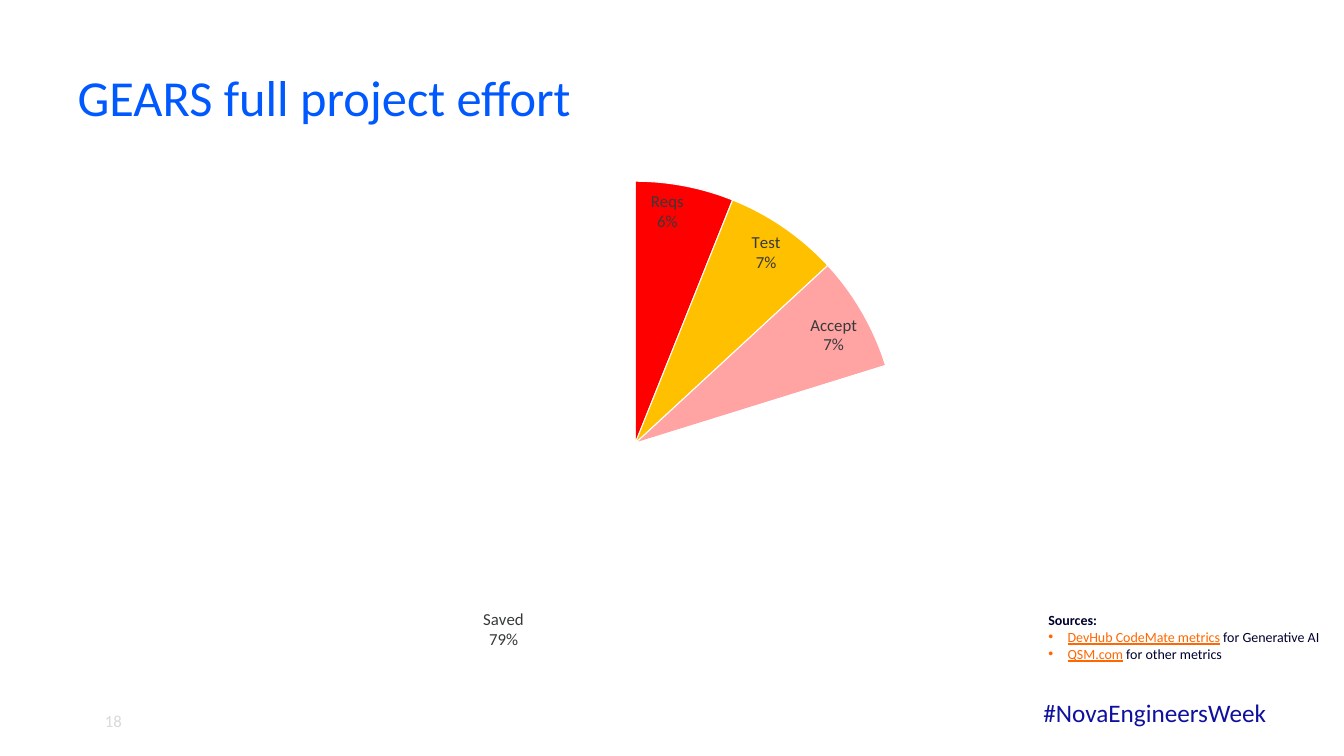
from lxml import etree
from pptx import Presentation
from pptx.chart.data import CategoryChartData
from pptx.dml.color import RGBColor
from pptx.enum.chart import XL_CHART_TYPE, XL_LABEL_POSITION as LabelPos
from pptx.enum.text import MSO_ANCHOR, PP_ALIGN
from pptx.oxml import parse_xml
from pptx.oxml.ns import nsdecls, qn
from pptx.util import Inches, Pt

FONT = "Calibri"
COLORS = {
    "title": "0058FF", "hashtag": "10109F", "text": "000030", "link": "FF6700",
    "number": "D8D9DA", "label": "363A3B", "white": "FFFFFF",
}
# phase: (percentage of effort, slice colour)
EFFORT = {
    "Reqs": (6, "FF0000"), "Design": (0, "00B050"), "Code": (0, "0F53FF"),
    "Test": (7, "FFC000"), "Accept": (7, "FFA3A3"), "Deploy": (0, "7030A0"),
    "Saved": (79, None),
}
UNLABELLED = ("Design", "Code")
SOURCES = [
    ("DevHub CodeMate metrics", " for Generative AI"),
    ("QSM.com", " for other metrics"),
]
PERCENT = '0"%"'


def style_font(font, size, color, bold=False, underline=False):
    font.name, font.size = FONT, Pt(size)
    font.bold, font.underline = bold, underline
    font.color.rgb = RGBColor.from_string(COLORS[color])


def add_run(paragraph, text, size, color, **style):
    run = paragraph.add_run()
    run.text = text
    style_font(run.font, size, color, **style)


def add_text_frame(slide, left, top, width, height):
    box = slide.shapes.add_textbox(
        Inches(left), Inches(top), Inches(width), Inches(height))
    box.text_frame.word_wrap = True
    return box.text_frame


def add_bullet(paragraph):
    props = paragraph._p.get_or_add_pPr()
    props.set("marL", str(Inches(0.19)))
    props.set("indent", str(-Inches(0.19)))
    color = etree.SubElement(props, qn("a:buClr"))
    etree.SubElement(color, qn("a:srgbClr")).set("val", COLORS["link"])
    etree.SubElement(props, qn("a:buFont")).set("typeface", "Arial")
    etree.SubElement(props, qn("a:buChar")).set("char", "•")


def set_title(slide):
    title = slide.shapes.title
    title.left, title.top = Inches(0.67), Inches(0.64)
    title.width, title.height = Inches(11.97), Inches(0.7)
    frame = title.text_frame
    frame.vertical_anchor = MSO_ANCHOR.MIDDLE
    heading = frame.paragraphs[0]
    heading.alignment, heading.line_spacing = PP_ALIGN.LEFT, 0.9
    add_run(heading, "GEARS full project effort", 36, "title")


def add_sources(slide):
    frame = add_text_frame(slide, 10.3, 6.02, 3.03, 0.61)
    add_run(frame.paragraphs[0], "Sources:", 10, "text", bold=True)
    for link, remark in SOURCES:
        item = frame.add_paragraph()
        add_bullet(item)
        add_run(item, link, 10, "link", underline=True)
        add_run(item, remark, 10, "text")


def add_footer(slide):
    hashtag = add_text_frame(slide, 10.25, 6.87, 2.59, 0.4)
    add_run(hashtag.paragraphs[0], "#NovaEngineersWeek", 18, "hashtag")

    number = add_text_frame(slide, 0.67, 6.95, 0.54, 0.4)
    number.margin_left = number.margin_right = 0
    number.margin_top = number.margin_bottom = 0
    number.vertical_anchor = MSO_ANCHOR.MIDDLE
    number.paragraphs[0].alignment = PP_ALIGN.RIGHT
    add_run(number.paragraphs[0], "18", 12, "number")


def place_plot(chart, x, y, w, h):
    """Fix the plot area, in fractions of the chart."""
    plot_area = chart._chartSpace.chart.plotArea
    for old in plot_area.findall(qn("c:layout")):
        plot_area.remove(old)
    sizes = "".join(f'<c:{tag} val="{value}"/>' for tag, value in
                    zip("xywh", (x, y, w, h)))
    plot_area.insert(0, parse_xml(
        f'<c:layout {nsdecls("c")}><c:manualLayout>'
        '<c:layoutTarget val="inner"/><c:xMode val="edge"/><c:yMode val="edge"/>'
        f'{sizes}</c:manualLayout></c:layout>'))


def color_slices(series):
    for index, (_, color) in enumerate(EFFORT.values()):
        piece = series.points[index].format
        if color:
            piece.fill.solid()
            piece.fill.fore_color.rgb = RGBColor.from_string(color)
        else:
            piece.fill.background()
        piece.line.color.rgb = RGBColor.from_string(COLORS["white"])
        piece.line.width = Pt(0.75)
    # The near-zero phase shows as a thin line
    deploy = list(EFFORT).index("Deploy")
    line = series.points[deploy].format.line
    line.color.rgb = RGBColor.from_string(EFFORT["Deploy"][1])
    line.width = Pt(3)


def label_slices(series):
    labels = series.data_labels
    labels.show_value = labels.show_category_name = True
    labels.show_percentage = labels.show_legend_key = False
    labels.number_format, labels.number_format_is_linked = PERCENT, False
    labels.position = LabelPos.INSIDE_END
    style_font(labels.font, 12, "label")
    separator = parse_xml(f'<c:separator {nsdecls("c")}>\n</c:separator>')
    labels._element.find(qn("c:showBubbleSize")).addnext(separator)

    phases = list(EFFORT)
    outside = (
        f"<c:numFmt formatCode='{PERCENT}' sourceLinked='0'/>"
        '<c:dLblPos val="outEnd"/><c:showLegendKey val="0"/><c:showVal val="1"/>'
        '<c:showCatName val="1"/><c:showSerName val="0"/><c:showPercent val="0"/>'
        '<c:showBubbleSize val="0"/><c:separator>\n</c:separator>')
    special = {phase: '<c:delete val="1"/>' for phase in UNLABELLED}
    special["Deploy"] = outside
    for position, (phase, content) in enumerate(special.items()):
        labels._element.insert(position, parse_xml(
            f'<c:dLbl {nsdecls("c")}><c:idx val="{phases.index(phase)}"/>'
            f'{content}</c:dLbl>'))
    style_font(series.points[phases.index("Deploy")].data_label.font, 12, "label")


def add_effort_pie(slide):
    data = CategoryChartData()
    data.categories = list(EFFORT)
    data.add_series("Series 1", [share for share, _ in EFFORT.values()])
    chart = slide.shapes.add_chart(
        XL_CHART_TYPE.PIE, Inches(2.98), Inches(1.2), Inches(7.14),
        Inches(5.98), data).chart
    chart.has_title = chart.has_legend = False
    style_font(chart.font, 10, "label")
    chart.plots[0].vary_by_categories = True
    place_plot(chart, 0.1, 0.1, 0.73, 0.87)
    series = chart.plots[0].series[0]
    color_slices(series)
    label_slices(series)


def main():
    prs = Presentation()
    prs.slide_width, prs.slide_height = Inches(13.33), Inches(7.5)
    slide = prs.slides.add_slide(prs.slide_layouts[5])
    add_footer(slide)
    add_sources(slide)
    set_title(slide)
    add_effort_pie(slide)
    prs.save("out.pptx")


if __name__ == "__main__":
    main()
